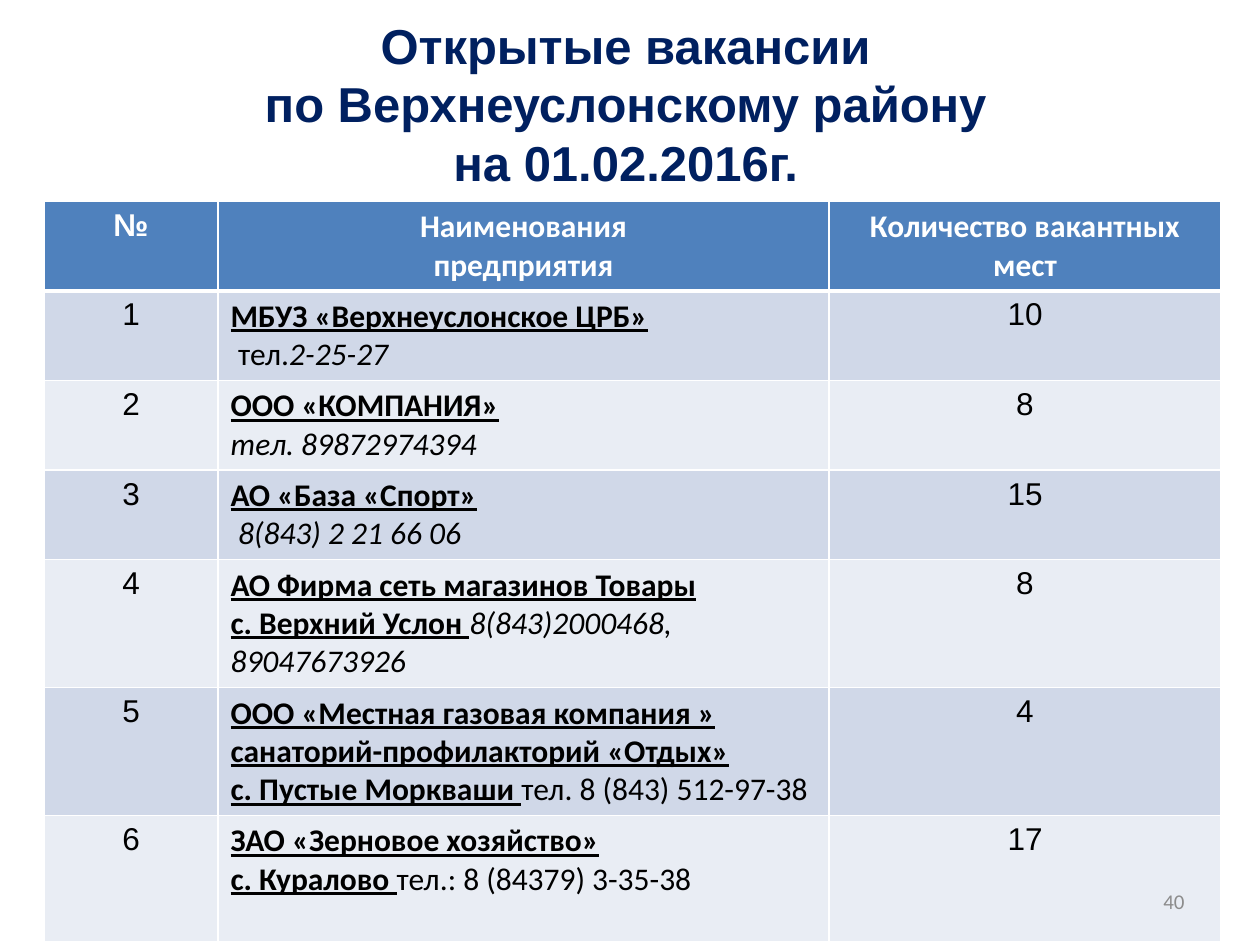
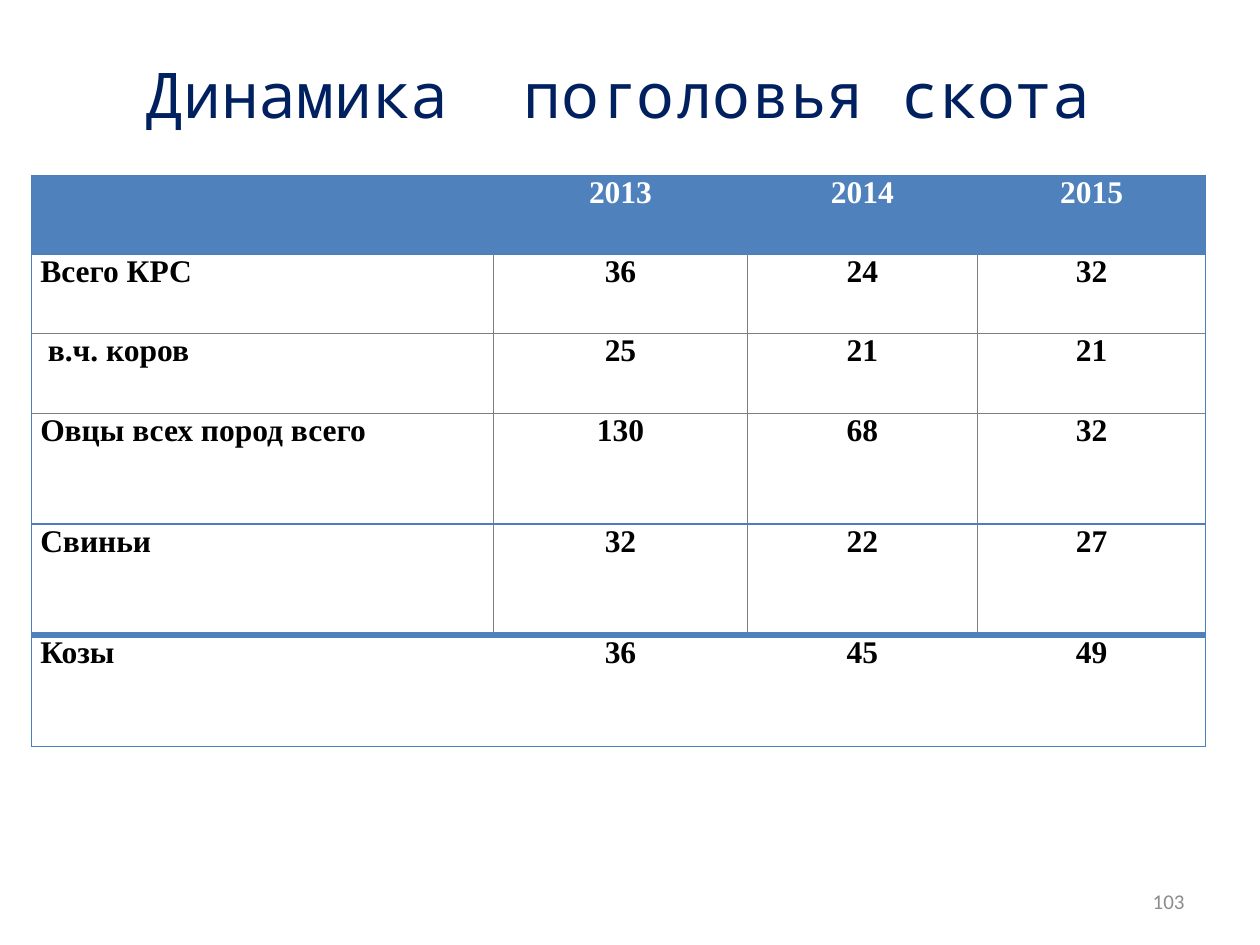
"""Build two table slides: open vacancies and livestock dynamics."""
from lxml import etree
from pptx import Presentation, util as u
from pptx.dml.color import RGBColor
from pptx.enum import text as t
from pptx.oxml.ns import qn

COLOURS = {
    "navy": "002060", "header": "4F81BD", "edge": "4B7EBC", "grid": "7F7F7F",
    "band": "D0D8E8", "pale": "E9EDF4", "white": "FFFFFF", "black": "000000",
    "number": "8C8C8C",
}
WIDTH, HEIGHT = u.Inches(10), u.Inches(7.5)
CENTER, LEFT, RIGHT = t.PP_ALIGN.CENTER, t.PP_ALIGN.LEFT, t.PP_ALIGN.RIGHT
SANS, BODY, SERIF, MONO = "Arial", "Calibri", "Times New Roman", "Noto Sans Mono"
HAIR_INDENT = u.Inches(0.06)

VACANCIES = [
    ([[("МБУЗ «Верхнеуслонское ЦРБ»", "bu")], [("тел.", ""), ("2-25-27", "i")]], "10", True),
    ([[("ООО «КОМПАНИЯ»", "bu")], [("тел. 89872974394", "i")]], "8", False),
    ([[("АО «База «Спорт»", "bu")], [("8(843) 2 21 66 06", "i")]], "15", True),
    ([[("АО Фирма сеть магазинов Товары", "bu")],
      [("с. Верхний Услон ", "bu"), ("8(843)2000468, 89047673926", "i")]], "8", False),
    ([[("ООО «Местная газовая компания » санаторий-профилакторий «Отдых»", "bu")],
      [("с. Пустые Моркваши ", "bu"), ("тел. 8 (843) 512-97-38", "")]], "4", False),
    ([[("ЗАО «Зерновое хозяйство»", "bu")],
      [("с. Куралово ", "bu"), ("тел.: 8 (84379) 3-35-38", "")]], "17", False),
]
LIVESTOCK = [
    ("", "2013", "2014", "2015"),
    ("Всего КРС", "36", "24", "32"),
    ("в.ч. коров", "25", "21", "21"),
    ("Овцы всех пород всего", "130", "68", "32"),
    ("Свиньи", "32", "22", "27"),
    ("Козы", "36", "45", "49"),
]


def across(share):
    """Turn a percentage of the slide width into a length."""
    return round(WIDTH * share / 100)


def down(share):
    """Turn a percentage of the slide height into a length."""
    return round(HEIGHT * share / 100)


def style(font, face, size, colour, flags=""):
    """Format a font; the flags are b, i and u."""
    font.name, font.size = face, u.Pt(size)
    font.color.rgb = RGBColor.from_string(COLOURS[colour])
    font.bold, font.italic, font.underline = ("b" in flags, "i" in flags, "u" in flags)


def add_title(page, lines, place, face, size, flags=""):
    """Move and format the title placeholder, one paragraph a line."""
    title = page.shapes.title
    x, y, width, height = place
    title.left, title.top = across(x), down(y)
    title.width, title.height = across(width), down(height)
    frame = title.text_frame
    frame.text = "\n".join(lines)
    frame.auto_size = t.MSO_AUTO_SIZE.NONE
    frame.vertical_anchor = t.MSO_ANCHOR.TOP
    for para in frame.paragraphs:
        para.alignment = CENTER
        for span in para.runs:
            style(span.font, face, size, "navy", flags)
    return frame


def add_page_number(page, number):
    """Write the page number at the lower right."""
    box = page.shapes.add_textbox(across(71.7), down(92.7), across(23.3), down(5.3))
    frame = box.text_frame
    frame.word_wrap = True
    frame.vertical_anchor = t.MSO_ANCHOR.MIDDLE
    frame.text = str(number)
    frame.paragraphs[0].alignment = RIGHT
    style(frame.paragraphs[0].runs[0].font, BODY, 12, "number")


def add_grid(page, x, y, columns, rows):
    """Add an unbanded table from column and row shares."""
    grid = page.shapes.add_table(len(rows), len(columns), across(x), down(y),
                                 across(sum(columns)), down(sum(rows))).table
    grid.first_row = grid.horz_banding = False
    for column, share in zip(grid.columns, columns):
        column.width = across(share)
    for row, share in zip(grid.rows, rows):
        row.height = down(share)
    return grid


def set_borders(cell, **edges):
    """Draw edges L, R, T and B, each a colour and a width or None."""
    properties = cell._tc.get_or_add_tcPr()
    for side in "LRTB":
        line = etree.SubElement(properties, qn(f"a:ln{side}"))
        if edges[side] is None:
            etree.SubElement(line, qn("a:noFill"))
            continue
        colour, width = edges[side]
        line.set("w", str(u.Pt(width)))
        fill = etree.SubElement(line, qn("a:solidFill"))
        etree.SubElement(fill, qn("a:srgbClr"), val=COLOURS[colour])


def set_fill(cell, colour):
    """Fill a cell, or clear it when there is no colour."""
    if colour is None:
        cell.fill.background()
    else:
        cell.fill.solid()
        cell.fill.fore_color.rgb = RGBColor.from_string(COLOURS[colour])


def write_cell(cell, paragraphs, face, colour, align, indent_last=False):
    """Write paragraphs made of (text, flags) spans."""
    frame = cell.text_frame
    for index, spans in enumerate(paragraphs):
        para = frame.paragraphs[0] if index == 0 else frame.add_paragraph()
        para.alignment = align
        for words, flags in spans:
            span = para.add_run()
            span.text = words
            style(span.font, face, 18, colour, flags)
    if indent_last:
        para._p.get_or_add_pPr().set("marL", str(HAIR_INDENT))


def build_vacancies(page):
    """Fill the slide of open vacancies."""
    add_title(page, ["Открытые вакансии", "по Верхнеуслонскому району", "на 01.02.2016г."],
              (2.4, 0.93, 94.5, 20.1), SANS, 28, "b")
    grid = add_grid(page, 3.5, 21.33, [13.8, 48.5, 31.1], [9.3] * 4 + [13.35] * 3)
    headings = [(["№"], SANS), (["Наименования", "предприятия"], BODY),
                (["Количество вакантных мест"], BODY)]
    for column, (lines, face) in enumerate(headings):
        write_cell(grid.cell(0, column), [[(line, "b")] for line in lines],
                   face, "white", CENTER)
    for row, (employer, places, indented) in enumerate(VACANCIES, 1):
        write_cell(grid.cell(row, 0), [[(str(row), "")]], SANS, "black", CENTER)
        write_cell(grid.cell(row, 1), employer, BODY, "black", LEFT, indented)
        write_cell(grid.cell(row, 2), [[(places, "")]], SANS, "black", CENTER)
    thin, thick = ("white", 1), ("white", 3)
    for row in range(len(VACANCIES) + 1):
        for column in range(len(headings)):
            cell = grid.cell(row, column)
            set_borders(cell, L=thin, R=thin, T=thick if row == 1 else thin,
                        B=thick if row == 0 else thin)
            set_fill(cell, "header" if row == 0 else "band" if row % 2 else "pale")
    add_page_number(page, 40)


def build_livestock(page):
    """Fill the slide of livestock numbers."""
    frame = add_title(page, ["Динамика поголовья cкота"], (6.7, 5.2, 84.7, 9.47), MONO, 36)
    para = frame.paragraphs[0]
    para.text = ""
    for words, spacing in (("Динамика", 0), (" ", 2160), ("поголовья cкота", 0)):
        span = para.add_run()
        span.text = words
        style(span.font, MONO, 36, "navy")
        span.font._element.set("spc", str(spacing))
    grid = add_grid(page, 2.5, 18.53, [36.7, 20.1, 18.3, 18.1], [8.4] * 3 + [11.75] * 3)
    outer, inner = ("edge", 0.75), ("grid", 0.5)
    levels = [outer, outer, inner, inner, ("edge", 1), ("header", 4), outer]
    last_row, last_column = len(LIVESTOCK) - 1, len(LIVESTOCK[0]) - 1
    for row, values in enumerate(LIVESTOCK):
        divider = inner if 0 < row < last_row else None
        for column, value in enumerate(values):
            cell = grid.cell(row, column)
            cell.margin_left = cell.margin_right = u.Inches(0.07)
            cell.margin_top = cell.margin_bottom = 0
            if value:
                write_cell(cell, [[(value, "b")]], SERIF, "black" if row else "white",
                           CENTER if column else LEFT, value == "в.ч. коров")
            set_borders(cell, L=divider if column else outer,
                        R=divider if column < last_column else outer,
                        T=levels[row], B=levels[row + 1])
            set_fill(cell, None if row else "header")
    add_page_number(page, 103)


def main():
    """Build and save the deck."""
    deck = Presentation()
    deck.slide_width, deck.slide_height = WIDTH, HEIGHT
    for build in (build_vacancies, build_livestock):
        build(deck.slides.add_slide(deck.slide_layouts[5]))
    deck.save("out.pptx")


if __name__ == "__main__":
    main()
